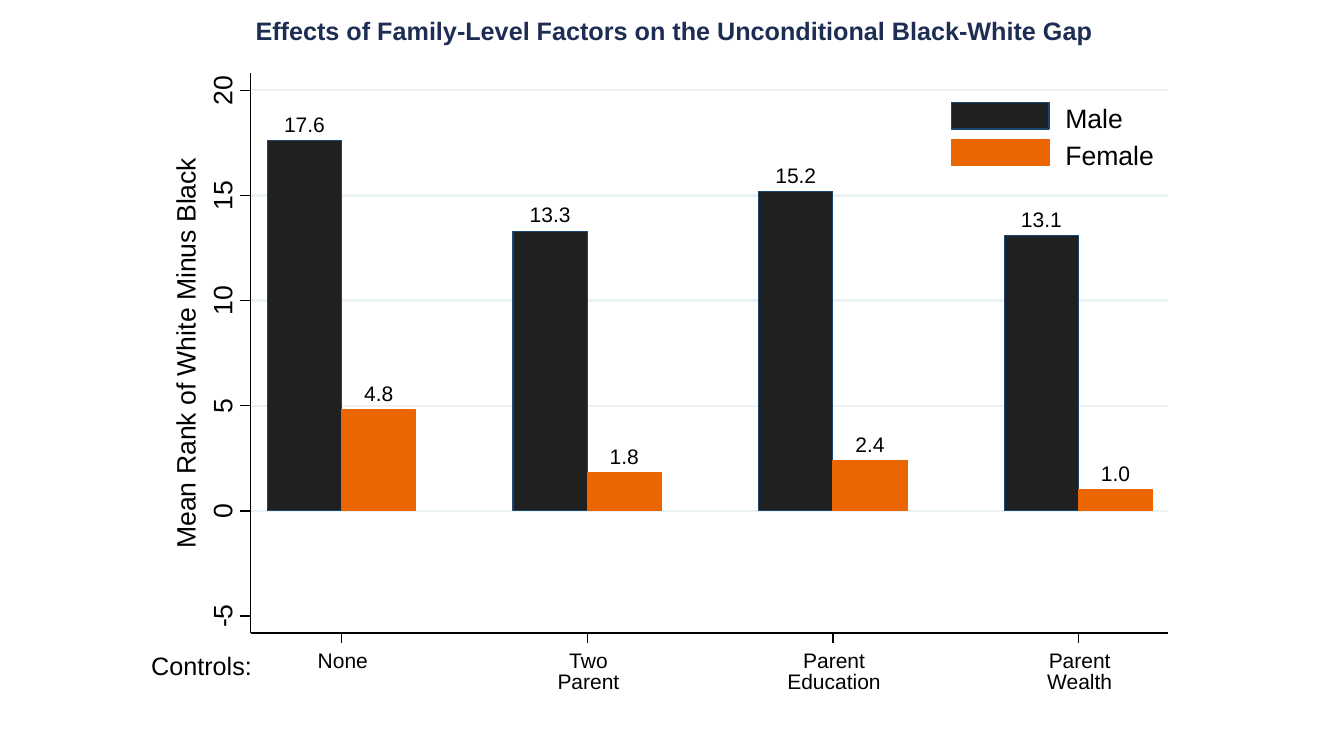
from lxml import etree
from pptx import Presentation
from pptx import util as u
from pptx.chart import data as chart_data
from pptx.dml.color import RGBColor
from pptx.enum import chart as ch
from pptx.enum import shapes, text
from pptx.oxml import parse_xml
from pptx.oxml.ns import nsdecls, qn

# Content
TITLE = "Effects of Family-Level Factors on the Unconditional Black-White Gap"
AXIS_TITLE = "Mean Rank of White Minus Black"
CONTROLS = [["None"], ["Two", "Parent"], ["Parent", "Education"], ["Parent", "Wealth"]]
SERIES = [
    ("Male", [17.6, 13.3, 15.2, 13.1], "male", "male_edge"),
    ("Female", [4.8, 1.8, 2.4, 1.0], "female", "female"),
]
COLORS = {
    "title": "1E2D53", "black": "000000", "white": "FFFFFF", "grid": "EAF2F3",
    "male": "202020", "male_edge": "1A476F", "female": "EB6600",
}
FONT = "Arial"
TICKS = range(-5, 21, 5)

# Geometry in centimetres
AXIS_LEFT, AXIS_RIGHT, AXIS_TOP, AXIS_BOTTOM = 6.32, 29.44, 1.85, 15.95
LOW, HIGH = -5.8, 20.8
FIRST_GROUP, PITCH, BAR_WIDTH = 8.61, 6.19, 1.87
TICK = 0.26
EDGE = 0.88

deck = Presentation()
deck.slide_width, deck.slide_height = u.Cm(33.87), u.Cm(19.05)
page = deck.slides.add_slide(deck.slide_layouts[6])


def color(name):
    return RGBColor.from_string(COLORS[name])


def value_y(value):
    return AXIS_TOP + (HIGH - value) * (AXIS_BOTTOM - AXIS_TOP) / (HIGH - LOW)


def add_text(lines, left, top, width, height, size=15, ink="black", bold=False,
             align="CENTER", anchor="TOP", rotation=0, spacing=None):
    box = page.shapes.add_textbox(u.Cm(left), u.Cm(top), u.Cm(width), u.Cm(height))
    box.rotation = rotation
    frame = box.text_frame
    frame.word_wrap = True
    frame.vertical_anchor = text.MSO_ANCHOR[anchor]
    frame.margin_left = frame.margin_right = frame.margin_top = frame.margin_bottom = 0
    for index, line in enumerate(lines):
        para = frame.paragraphs[0] if index == 0 else frame.add_paragraph()
        para.alignment = text.PP_ALIGN[align]
        if spacing:
            para.line_spacing = u.Pt(spacing)
        span = para.add_run()
        span.text = line
        span.font.name, span.font.size, span.font.bold = FONT, u.Pt(size), bold
        span.font.color.rgb = color(ink)


def add_line(x1, y1, x2, y2, ink="black", weight=EDGE):
    line = page.shapes.add_connector(
        shapes.MSO_CONNECTOR.STRAIGHT, u.Cm(x1), u.Cm(y1), u.Cm(x2), u.Cm(y2))
    line.line.color.rgb, line.line.width = color(ink), u.Pt(weight)
    etree.SubElement(line._element.spPr, qn("a:effectLst"))


def add_rectangle(left, top, width, height, fill, edge):
    shape = page.shapes.add_shape(
        shapes.MSO_SHAPE.RECTANGLE, u.Cm(left), u.Cm(top), u.Cm(width), u.Cm(height))
    shape.shadow.inherit = False
    paint(shape, fill, edge)


def paint(part, fill, edge):
    part.fill.solid()
    part.fill.fore_color.rgb = color(fill)
    part.line.color.rgb, part.line.width = color(edge), u.Pt(EDGE)


# Title and grid
add_text([TITLE], 4.29, 0.25, 25.4, 1.02, size=18, ink="title", bold=True, anchor="MIDDLE")
for tick in TICKS[1:]:
    add_line(AXIS_LEFT, value_y(tick), AXIS_RIGHT, value_y(tick), "grid", 1.75)

# Bars: the chart's plot area fills its whole frame
data = chart_data.CategoryChartData(number_format="0.0")
data.categories = [" ".join(lines) for lines in CONTROLS]
for name, values, fill, edge in SERIES:
    data.add_series(name, values)
chart = page.shapes.add_chart(
    ch.XL_CHART_TYPE.COLUMN_CLUSTERED, u.Cm(FIRST_GROUP - PITCH / 2), u.Cm(AXIS_TOP),
    u.Cm(PITCH * len(CONTROLS)), u.Cm(AXIS_BOTTOM - AXIS_TOP), data).chart
chart.has_title = chart.has_legend = False
chart.font.name, chart.font.size = FONT, u.Pt(15)
chart.font.color.rgb = color("black")
chart.value_axis.minimum_scale, chart.value_axis.maximum_scale = LOW, HIGH
chart.value_axis.has_major_gridlines = False
chart.value_axis.visible = chart.category_axis.visible = False

plot = chart.plots[0]
plot.vary_by_categories = False
plot.overlap = 0
plot.gap_width = round((PITCH / BAR_WIDTH - 2) * 100)
plot.has_data_labels = True
labels = plot.data_labels
labels.show_value = True
labels.number_format, labels.number_format_is_linked = "0.0", False
labels.position = ch.XL_LABEL_POSITION.OUTSIDE_END
labels.font.name, labels.font.size = FONT, u.Pt(15)
labels.font.color.rgb = color("black")
for series, (name, values, fill, edge) in zip(plot.series, SERIES):
    paint(series.format, fill, edge)

# Full-frame layout and clear background
area = chart._chartSpace.chart.plotArea
for layout in area.findall(qn("c:layout")):
    area.remove(layout)
area.insert(0, parse_xml(
    f'<c:layout {nsdecls("c")}><c:manualLayout><c:layoutTarget val="inner"/>'
    '<c:xMode val="edge"/><c:yMode val="edge"/><c:x val="0"/><c:y val="0"/>'
    '<c:w val="1"/><c:h val="1"/></c:manualLayout></c:layout>'))
CLEAR = f'<c:spPr {nsdecls("c", "a")}><a:noFill/><a:ln><a:noFill/></a:ln></c:spPr>'
area.append(parse_xml(CLEAR))
chart._chartSpace.chart.addnext(parse_xml(CLEAR))

# Value axis
add_line(AXIS_LEFT, AXIS_BOTTOM, AXIS_LEFT, AXIS_TOP)
for tick in TICKS:
    y = value_y(tick)
    add_line(AXIS_LEFT, y, AXIS_LEFT - TICK, y)
    add_text([str(tick)], 5.07, y - 0.45, 1.04, 0.9, size=19, anchor="MIDDLE", rotation=270)
add_text([AXIS_TITLE], -0.44, 8.45, 10.2, 0.9, size=19, anchor="MIDDLE", rotation=270)

# Category axis
add_line(AXIS_LEFT, AXIS_BOTTOM, AXIS_RIGHT, AXIS_BOTTOM)
add_text(["Controls:"], 3.81, 16.38, 2.7, 0.8, size=18, align="LEFT")
for index, lines in enumerate(CONTROLS):
    x = FIRST_GROUP + index * PITCH
    add_line(x, AXIS_BOTTOM, x, AXIS_BOTTOM + TICK)
    add_text(lines, x - 1.47, 16.43, 3, 0.53 * len(lines), spacing=15)

# Legend
add_rectangle(23.93, 2.51, 5.31, 1.7, "white", "white")
for index, (name, values, fill, edge) in enumerate(SERIES):
    top = 2.59 + index * 0.93
    add_rectangle(23.98, top, 2.46, 0.66, fill, edge)
    add_text([name], 26.85, top - 0.02, 2.54, 0.89, size=19, align="LEFT")

deck.save("out.pptx")
